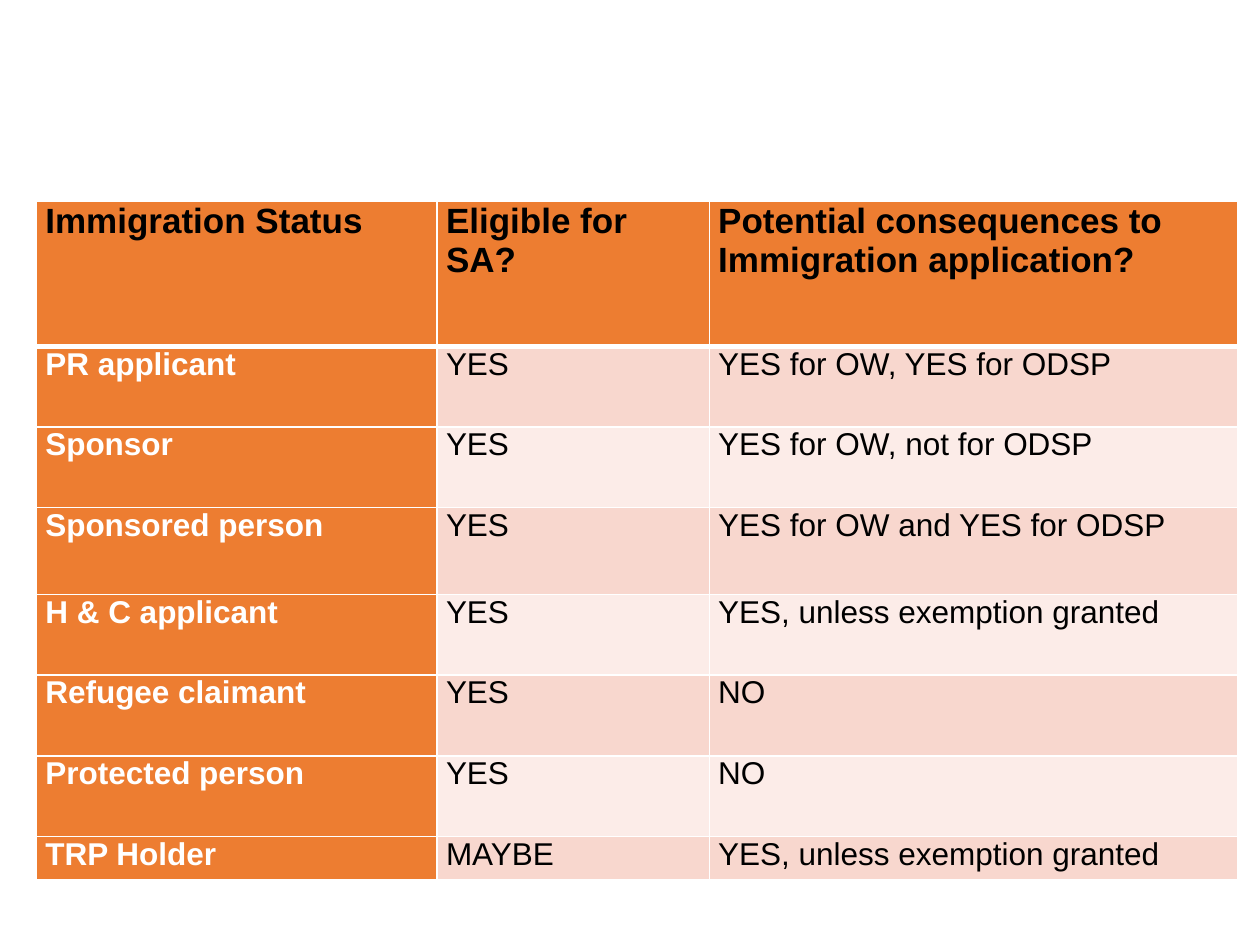
from lxml import etree
from pptx import Presentation
from pptx.dml.color import RGBColor
from pptx.enum.text import MSO_ANCHOR, PP_ALIGN
from pptx.oxml.ns import qn
from pptx.util import Inches, Pt

TOP, LEFT = MSO_ANCHOR.TOP, PP_ALIGN.LEFT
ORANGE = RGBColor(0xED, 0x7D, 0x31)
PINK = RGBColor(0xF8, 0xD7, 0xCE)
PALE_PINK = RGBColor(0xFC, 0xEC, 0xE8)
BLACK = RGBColor(0, 0, 0)
WHITE = RGBColor(0xFF, 0xFF, 0xFF)

# Table grid in inches
TABLE_LEFT, TABLE_TOP = 0.29, 1.6
COLUMN_WIDTHS = [3.18, 2.16, 4.19]
HEADER_HEIGHT, ROW_HEIGHT = 1.15, 0.64
SPECIAL_HEIGHTS = {"Sponsored person": 0.69, "TRP Holder": 0.34}

HEADINGS = ("Immigration Status", "Eligible for SA?",
            "Potential consequences to Immigration application?")
STATUSES = [
    ("PR applicant", "YES", "YES for OW, YES for ODSP"),
    ("Sponsor", "YES", "YES for OW, not for ODSP"),
    ("Sponsored person", "YES", "YES for OW and YES for ODSP"),
    ("H & C applicant", "YES", "YES, unless exemption granted"),
    ("Refugee claimant", "YES", "NO"),
    ("Protected person", "YES", "NO"),
    ("TRP Holder", "MAYBE", "YES, unless exemption granted"),
]


def write(cell, text, size=18, color=BLACK, bold=False):
    cell.margin_left = cell.margin_right = Inches(0.07)
    cell.margin_top = cell.margin_bottom = 0
    cell.vertical_anchor = TOP
    paragraph = cell.text_frame.paragraphs[0]
    paragraph.alignment = LEFT
    run = paragraph.add_run()
    run.text = text
    run.font.name = "Arial"
    run.font.size = Pt(size)
    run.font.bold = bold
    run.font.color.rgb = color


def add_border(cell, side, width):
    properties = cell._tc.get_or_add_tcPr()
    line = etree.SubElement(properties, qn(f"a:ln{side}"), w=str(Pt(width)))
    fill = etree.SubElement(line, qn("a:solidFill"))
    etree.SubElement(fill, qn("a:srgbClr"), val=str(WHITE))


presentation = Presentation()
presentation.slide_width = Inches(10)
presentation.slide_height = Inches(7.5)
slide = presentation.slides.add_slide(presentation.slide_layouts[6])

# Table with its column widths and row heights
rows = [HEADINGS] + STATUSES
heights = [HEADER_HEIGHT] + [SPECIAL_HEIGHTS.get(status[0], ROW_HEIGHT)
                             for status in STATUSES]
table = slide.shapes.add_table(
    len(rows), len(HEADINGS), Inches(TABLE_LEFT), Inches(TABLE_TOP),
    Inches(sum(COLUMN_WIDTHS)), Inches(sum(heights))).table
for column, width in zip(table.columns, COLUMN_WIDTHS):
    column.width = Inches(width)
for row, height in zip(table.rows, heights):
    row.height = Inches(height)

# Cells: orange header row and status column, alternating pink answers
for row_index, texts in enumerate(rows):
    for column_index, text in enumerate(texts):
        cell = table.cell(row_index, column_index)
        for side in "LRTB":
            under_header = (row_index, side) in [(0, "B"), (1, "T")]
            add_border(cell, side, 3 if under_header else 1)
        cell.fill.solid()
        if row_index == 0:
            cell.fill.fore_color.rgb = ORANGE
            write(cell, text, size=20, bold=True)
        elif column_index == 0:
            cell.fill.fore_color.rgb = ORANGE
            write(cell, text, color=WHITE, bold=True)
        else:
            cell.fill.fore_color.rgb = PINK if row_index % 2 else PALE_PINK
            write(cell, text)

presentation.save("out.pptx")
